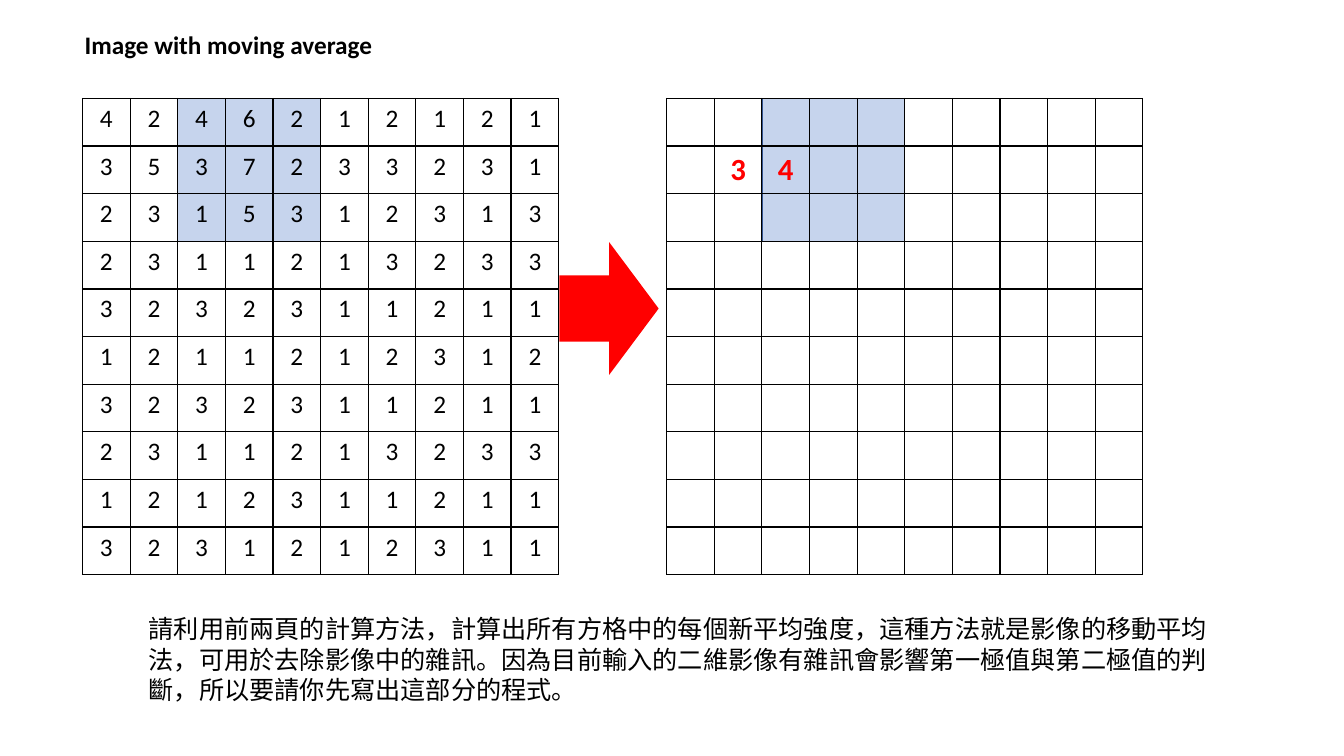
from dataclasses import dataclass

from lxml.etree import SubElement
from pptx import Presentation
from pptx.dml.color import RGBColor
from pptx.enum.shapes import MSO_SHAPE
from pptx.enum.text import MSO_ANCHOR, MSO_AUTO_SIZE, PP_ALIGN
from pptx.oxml.ns import qn
from pptx.shapes.autoshape import Shape
from pptx.slide import Slide
from pptx.table import _Cell
from pptx.text.text import TextFrame
from pptx.util import Cm, Pt

BLACK = RGBColor(0x00, 0x00, 0x00)
RED = RGBColor(0xFF, 0x00, 0x00)
BLUE = RGBColor(0x44, 0x72, 0xC4)
NAVY = RGBColor(0x32, 0x54, 0x91)
FONT = "Calibri"

SIZE = 10       # cells per side
CELL = 1.2      # cell side in cm
TOP = 2.48      # top of both grids in cm
MASK = 3        # cells per side of the averaging window
MASK_COL = 2    # first column under the window

PIXELS = (
    "4246212121",
    "3537233231",
    "2315312313",
    "2311213233",
    "3232311211",
    "1211212312",
    "3232311211",
    "2311213233",
    "1212311211",
    "3231212311",
)
MEANS = ("", " 34")  # a space is an empty cell

TITLE = "Image with moving average"
NOTE = (
    "請利用前兩頁的計算方法，計算出所有方格中的每個新平均強度，"
    "這種方法就是影像的移動平均法，可用於去除影像中的雜訊。"
    "因為目前輸入的二維影像有雜訊會影響第一極值與第二極值的判斷，"
    "所以要請你先寫出這部分的程式。"
)


@dataclass(frozen=True)
class Grid:
    left: float
    rows: tuple[str, ...]
    size: int
    color: RGBColor
    bold: bool


GRIDS = (
    Grid(2.08, PIXELS, 18, BLACK, False),
    Grid(16.8, MEANS, 22, RED, True),
)


def add_box(slide: Slide, kind: MSO_SHAPE, left: float, top: float,
            width: float, height: float, color: RGBColor) -> Shape:
    box = slide.shapes.add_shape(kind, Cm(left), Cm(top), Cm(width), Cm(height))
    box.shadow.inherit = False
    box.fill.solid()
    box.fill.fore_color.rgb = color
    box.line.fill.background()
    return box


def write(frame: TextFrame, text: str, size: int, color: RGBColor,
          bold: bool, align: PP_ALIGN) -> None:
    para = frame.paragraphs[0]
    para.text = text
    para.alignment = align
    font = para.font
    font.name, font.size, font.bold = FONT, Pt(size), bold
    font.color.rgb = color


def set_edges(cell: _Cell) -> None:
    props = cell._tc.get_or_add_tcPr()
    for side in ("a:lnL", "a:lnR", "a:lnT", "a:lnB"):
        line = SubElement(props, qn(side), w=str(Pt(1)))
        fill = SubElement(line, qn("a:solidFill"))
        SubElement(fill, qn("a:srgbClr"), val=str(BLACK))


def add_mask(slide: Slide, grid: Grid) -> None:
    side = MASK * CELL
    mask = add_box(slide, MSO_SHAPE.RECTANGLE, grid.left + MASK_COL * CELL,
                   TOP, side, side, BLUE)
    mask.line.color.rgb = NAVY
    mask.line.width = Pt(1)
    color = mask.fill._xPr.find(qn("a:solidFill"))[0]
    SubElement(color, qn("a:alpha"), val="30000")


def add_grid(slide: Slide, grid: Grid) -> None:
    side = Cm(SIZE * CELL)
    table = slide.shapes.add_table(
        SIZE, SIZE, Cm(grid.left), Cm(TOP), side, side).table
    table.first_row = table.horz_banding = False
    for col in table.columns:
        col.width = Cm(CELL)
    for row in table.rows:
        row.height = Cm(CELL)
    for i in range(SIZE):
        text = grid.rows[i] if i < len(grid.rows) else ""
        for j, sign in enumerate(text.ljust(SIZE)):
            cell = table.cell(i, j)
            cell.margin_bottom = Cm(0.1)
            set_edges(cell)
            cell.fill.background()
            if sign != " ":
                write(cell.text_frame, sign, grid.size, grid.color,
                      grid.bold, PP_ALIGN.CENTER)


def add_title(slide: Slide) -> None:
    title = slide.shapes.title
    title.left, title.top = Cm(1.88), Cm(0.61)
    title.width, title.height = Cm(7.82), Cm(1.02)
    frame = title.text_frame
    frame.word_wrap = False
    frame.auto_size = MSO_AUTO_SIZE.SHAPE_TO_FIT_TEXT
    frame.vertical_anchor = MSO_ANCHOR.TOP
    write(frame, TITLE, 18, BLACK, True, PP_ALIGN.LEFT)


def add_note(slide: Slide) -> None:
    box = slide.shapes.add_textbox(Cm(3.5), Cm(15.34), Cm(27.4), Cm(2.56))
    frame = box.text_frame
    frame.word_wrap = True
    frame.auto_size = MSO_AUTO_SIZE.SHAPE_TO_FIT_TEXT
    write(frame, NOTE, 18, BLACK, False, PP_ALIGN.LEFT)


def main() -> None:
    deck = Presentation()
    deck.slide_width, deck.slide_height = Cm(33.87), Cm(19.05)
    slide = deck.slides.add_slide(deck.slide_layouts[5])

    add_title(slide)

    # Input and output grids, each over its window
    for grid in GRIDS:
        add_mask(slide, grid)
        add_grid(slide, grid)

    # Arrow from input to output
    add_box(slide, MSO_SHAPE.RIGHT_ARROW, 14.1, 6.1, 2.5, 3.35, RED)

    add_note(slide)
    deck.save("out.pptx")


if __name__ == "__main__":
    main()
